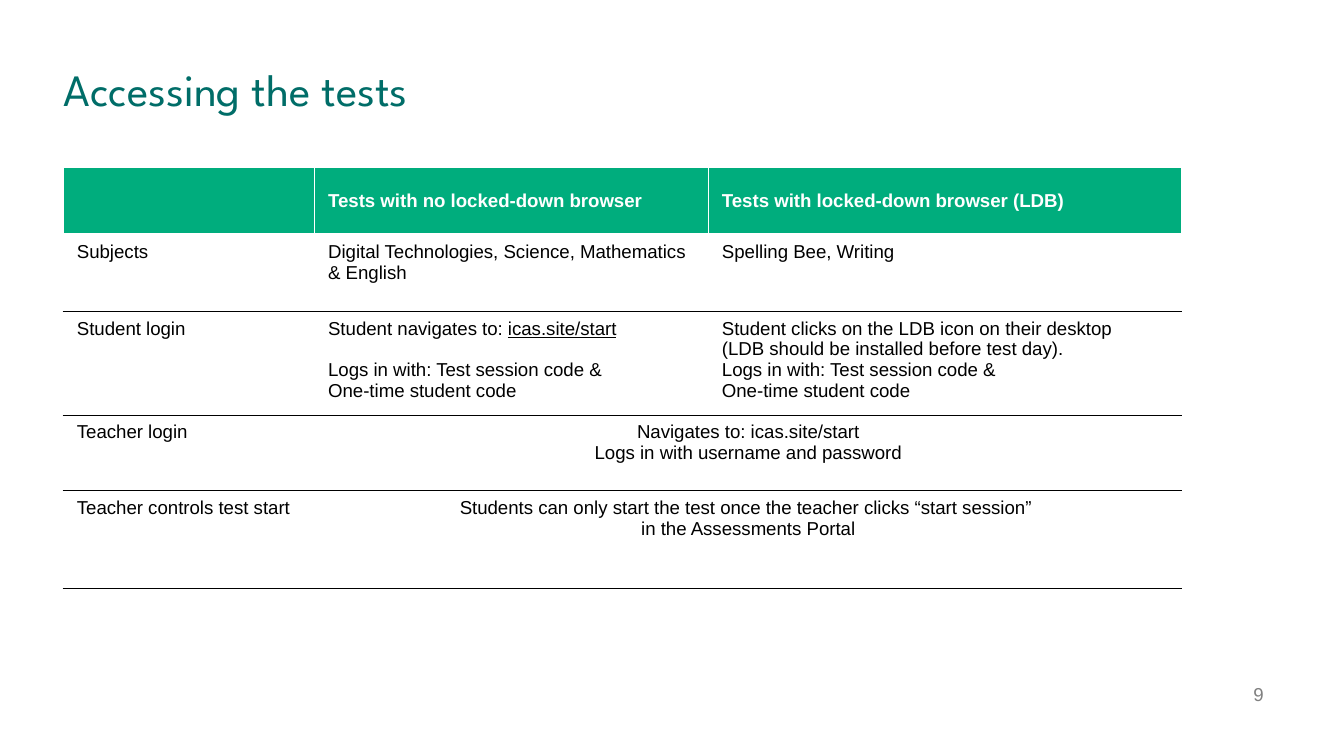
from lxml.etree import SubElement
from pptx import Presentation
from pptx.dml.color import RGBColor
from pptx.enum.text import MSO_ANCHOR, PP_ALIGN
from pptx.oxml.ns import qn
from pptx.util import Pt

GREEN = RGBColor(0x00, 0xAD, 0x7D)
TEAL = RGBColor(0x00, 0x6D, 0x68)
GRAY = RGBColor(0x80, 0x80, 0x80)
BLACK = RGBColor(0, 0, 0)
WHITE = RGBColor(0xFF, 0xFF, 0xFF)

COLUMN_WIDTHS = [134.6, 211, 253.4]
ROW_HEIGHTS = [36.5, 41, 52, 40.7, 52]
SESSION_LOGIN = ["Logs in with: Test session code &", "One-time student code"]
HEADERS = ["", "Tests with no locked-down browser", "Tests with locked-down browser (LDB)"]
# One entry per cell; a row with two entries merges its last two columns.
BODY_ROWS = [
    [["Subjects"],
     ["Digital Technologies, Science, Mathematics & English"],
     ["Spelling Bee, Writing"]],
    [["Student login"],
     ["Student navigates to: ", *SESSION_LOGIN],
     ["Student clicks on the LDB icon on their desktop",
      "(LDB should be installed before test day).", *SESSION_LOGIN]],
    [["Teacher login"],
     ["Navigates to: icas.site/start", "Logs in with username and password"]],
    [["Teacher controls test start"],
     ["Students can only start the test once the teacher clicks “start session” ",
      "in the Assessments Portal"]],
]


def add_run(paragraph, text, size=10, font="Arial", color=BLACK, bold=False, underline=False):
    run = paragraph.add_run()
    run.text = text
    run.font.size = Pt(size)
    run.font.name = font
    run.font.color.rgb = color
    run.font.bold = bold
    run.font.underline = underline


def write_text(text_frame, lines, align=PP_ALIGN.LEFT, **run_format):
    for index, line in enumerate(lines):
        paragraph = text_frame.paragraphs[0] if index == 0 else text_frame.add_paragraph()
        paragraph.alignment = align
        add_run(paragraph, line, **run_format)


def add_text_box(slide, left, top, width, height, text, anchor, **text_format):
    text_frame = slide.shapes.add_textbox(Pt(left), Pt(top), Pt(width), Pt(height)).text_frame
    text_frame.word_wrap = True
    text_frame.vertical_anchor = anchor
    write_text(text_frame, [text], **text_format)
    return text_frame


def style_cell(cell, fill, top, bottom):
    """Set fill and borders; top and bottom are (color, width) pairs."""
    properties = cell._tc.get_or_add_tcPr()
    side = (WHITE, 1)
    for tag, (color, width) in zip(("lnL", "lnR", "lnT", "lnB"), (side, side, top, bottom)):
        line = SubElement(properties, qn(f"a:{tag}"), w=str(Pt(width)))
        solid = SubElement(line, qn("a:solidFill"))
        SubElement(solid, qn("a:srgbClr"), val=str(color))
    cell.fill.solid()
    cell.fill.fore_color.rgb = fill


def add_access_table(slide):
    table = slide.shapes.add_table(
        len(ROW_HEIGHTS), len(COLUMN_WIDTHS), Pt(34), Pt(89.4),
        Pt(sum(COLUMN_WIDTHS)), Pt(sum(ROW_HEIGHTS))).table
    for column, width in zip(table.columns, COLUMN_WIDTHS):
        column.width = Pt(width)
    for row, height in zip(table.rows, ROW_HEIGHTS):
        row.height = Pt(height)

    for cell, header in zip(table.rows[0].cells, HEADERS):
        style_cell(cell, GREEN, top=(WHITE, 1), bottom=(WHITE, 3))
        cell.vertical_anchor = MSO_ANCHOR.MIDDLE
        if header:
            write_text(cell.text_frame, [header], color=WHITE, bold=True)

    rule = (BLACK, 0.25)
    for row_index, contents in enumerate(BODY_ROWS, start=1):
        for cell in table.rows[row_index].cells:
            style_cell(cell, WHITE, top=(WHITE, 1) if row_index == 1 else rule, bottom=rule)
        merged = len(contents) == 2
        if merged:
            table.cell(row_index, 1).merge(table.cell(row_index, 2))
        for column_index, lines in enumerate(contents):
            centered = merged and column_index == 1
            write_text(table.cell(row_index, column_index).text_frame, lines,
                       align=PP_ALIGN.CENTER if centered else PP_ALIGN.LEFT)

    login_paragraphs = table.cell(2, 1).text_frame.paragraphs
    add_run(login_paragraphs[0], "icas.site/start", underline=True)
    login_paragraphs[1].space_before = Pt(11.2)


def main():
    presentation = Presentation()
    presentation.slide_width = Pt(720)
    presentation.slide_height = Pt(405)
    slide = presentation.slides.add_slide(presentation.slide_layouts[6])

    title = add_text_box(slide, 34, 33, 620, 29, "Accessing the tests", MSO_ANCHOR.TOP,
                         size=24, font="League Spartan", color=TEAL)
    title.margin_left = title.margin_top = title.margin_right = title.margin_bottom = 0
    add_access_table(slide)
    add_text_box(slide, 516, 364, 168, 16, "9", MSO_ANCHOR.MIDDLE,
                 align=PP_ALIGN.RIGHT, color=GRAY)
    presentation.save("out.pptx")


if __name__ == "__main__":
    main()
